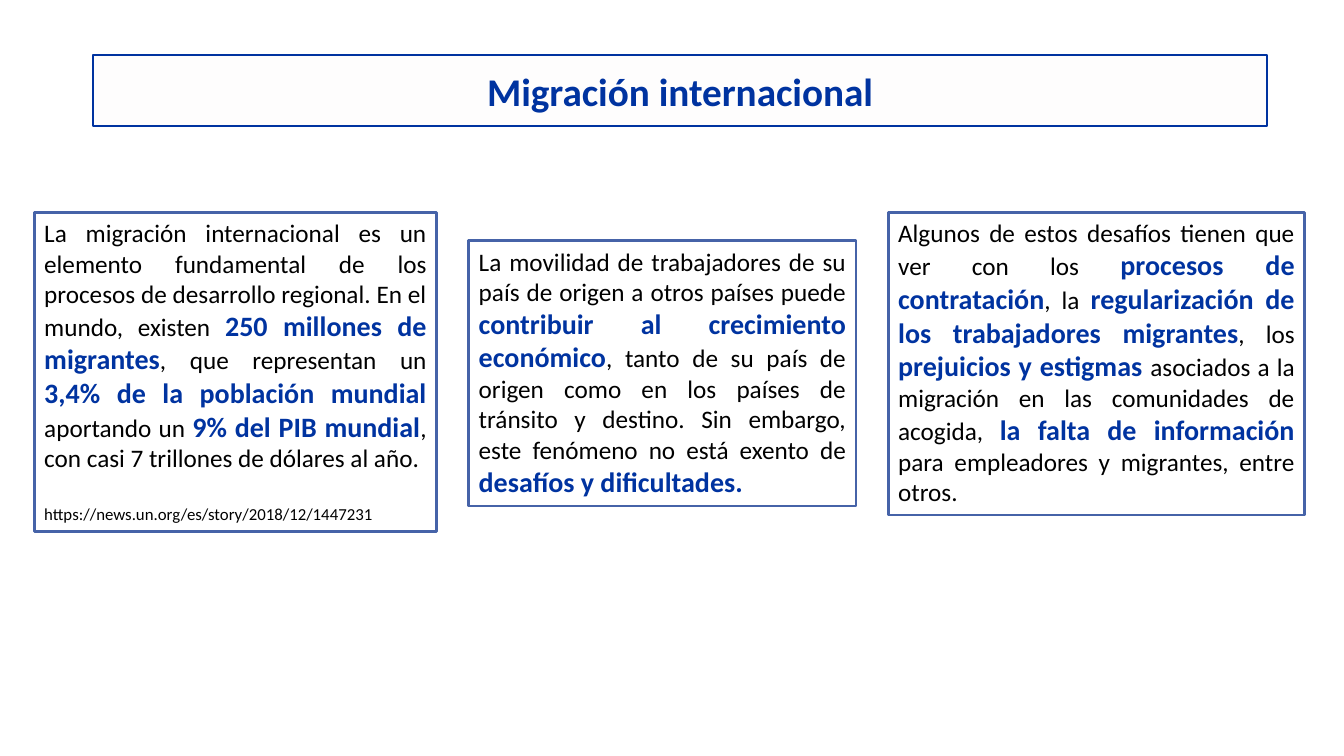
from dataclasses import dataclass

from pptx import Presentation
from pptx.dml.color import RGBColor
from pptx.enum.shapes import MSO_SHAPE as Shape
from pptx.enum.text import MSO_ANCHOR as Anchor, MSO_AUTO_SIZE as AutoSize, PP_ALIGN as Align
from pptx.util import Inches, Pt


@dataclass(frozen=True)
class Theme:
    font: str = "Calibri"
    blue: str = "0033A0"
    border: str = "4663A8"
    black: str = "000000"
    white: str = "FFFFFF"
    title_fill: str = "FEFDFD"
    title_size: int = 28
    strong_size: int = 20
    body_size: int = 18
    source_size: int = 12
    source_gap: int = 22


THEME = Theme()
BODY = {"size": THEME.body_size, "color": THEME.black, "bold": False}
STRONG = {"size": THEME.strong_size, "color": THEME.blue, "bold": True}
TITLE_STYLE = {**STRONG, "size": THEME.title_size}
SOURCE_STYLE = {**BODY, "size": THEME.source_size}

TITLE = "Migración internacional"
SOURCE = "https://news.un.org/es/story/2018/12/1447231"

# Each text alternates plain and highlighted passages, plain first.
COLUMNS = [
    {"top": 2.11, "width": 3.99, "height": 3.16, "source": SOURCE, "text": [
        "La migración internacional es un elemento fundamental de los procesos de "
        "desarrollo regional. En el mundo, existen ",
        "250 millones de migrantes",
        ", que representan un ",
        "3,4% de la población mundial ",
        "aportando un ",
        "9% del PIB mundial",
        ", con casi 7 trillones de dólares al año.",
    ]},
    {"top": 2.39, "width": 3.84, "height": 2.63, "source": None, "text": [
        "La movilidad de trabajadores de su país de origen a otros países puede ",
        "contribuir al crecimiento económico",
        ", tanto de su país de origen como en los países de tránsito y destino. "
        "Sin embargo, este fenómeno no está exento de ",
        "desafíos y dificultades.",
    ]},
    {"top": 2.11, "width": 4.13, "height": 3, "source": None, "text": [
        "Algunos de estos desafíos tienen que ver con los ",
        "procesos de contratación",
        ", la ",
        "regularización de los trabajadores migrantes",
        ", los ",
        "prejuicios y estigmas ",
        "asociados a la migración en las comunidades de acogida, ",
        "la falta de información",
        " para empleadores y migrantes, entre otros.",
    ]},
]
SLIDE_SIZE = (13.33, 7.5)
TITLE_BOX = (0.92, 0.55, 11.65, 0.7)
LEFT_MARGIN, COLUMN_GAP = 0.34, 0.32


def add_box(slide, box, fill, line, line_width, anchor):
    shape = slide.shapes.add_shape(Shape.RECTANGLE, *map(Inches, box))
    shape.shadow.inherit = False
    shape.fill.solid()
    shape.fill.fore_color.rgb = RGBColor.from_string(fill)
    shape.line.color.rgb = RGBColor.from_string(line)
    shape.line.width = Pt(line_width)
    frame_format = {"word_wrap": True, "auto_size": AutoSize.SHAPE_TO_FIT_TEXT,
                    "vertical_anchor": anchor, "margin_top": Inches(0.05),
                    "margin_bottom": Inches(0.05)}
    for name, value in frame_format.items():
        setattr(shape.text_frame, name, value)
    return shape.text_frame


def add_run(paragraph, text, style):
    run = paragraph.add_run()
    run.text = text
    font_format = {"name": THEME.font, "size": Pt(style["size"]), "bold": style["bold"]}
    for name, value in font_format.items():
        setattr(run.font, name, value)
    run.font.color.rgb = RGBColor.from_string(style["color"])


def add_title(slide):
    frame = add_box(slide, TITLE_BOX, THEME.title_fill, THEME.blue, 1.5, Anchor.MIDDLE)
    frame.paragraphs[0].alignment = Align.CENTER
    add_run(frame.paragraphs[0], TITLE, TITLE_STYLE)


def add_column(slide, left, column):
    box = (left, column["top"], column["width"], column["height"])
    frame = add_box(slide, box, THEME.white, THEME.border, 2, Anchor.TOP)
    paragraph = frame.paragraphs[0]
    paragraph.alignment = Align.JUSTIFY
    for index, passage in enumerate(column["text"]):
        add_run(paragraph, passage, STRONG if index % 2 else BODY)
    if column["source"]:
        paragraph = frame.add_paragraph()
        paragraph.alignment = Align.JUSTIFY
        paragraph.space_before = Pt(THEME.source_gap)
        add_run(paragraph, column["source"], SOURCE_STYLE)


def main():
    presentation = Presentation()
    presentation.slide_width, presentation.slide_height = map(Inches, SLIDE_SIZE)
    slide = presentation.slides.add_slide(presentation.slide_layouts[6])
    add_title(slide)
    left = LEFT_MARGIN
    for column in COLUMNS:
        add_column(slide, left, column)
        left += column["width"] + COLUMN_GAP
    presentation.save("out.pptx")


if __name__ == "__main__":
    main()
